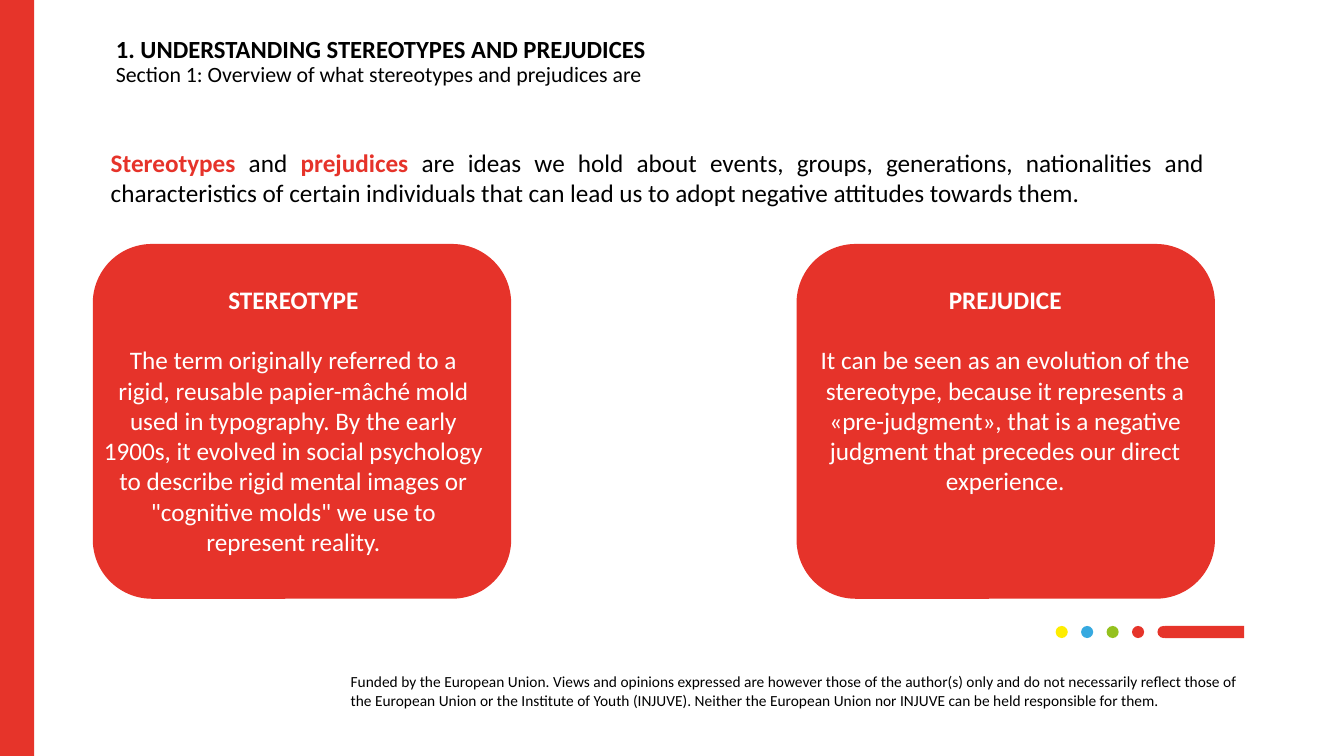
import pptx
from pptx.dml.color import RGBColor
from pptx.enum.shapes import MSO_SHAPE
from pptx.enum.text import PP_ALIGN
from pptx.util import Inches, Pt

COLORS = {
    "red": "E6342A",
    "card": "E6332A",
    "green": "94C11E",
    "blue": "36A9E0",
    "yellow": "FEED00",
    "black": "000000",
    "white": "FFFFFF",
}

deck = pptx.Presentation()
deck.slide_width, deck.slide_height = Inches(13.33), Inches(7.5)
page = deck.slides.add_slide(deck.slide_layouts[6])


def add_block(kind, left, top, width, height, color):
    block = page.shapes.add_shape(
        kind, Inches(left), Inches(top), Inches(width), Inches(height))
    block.shadow.inherit = False
    block.fill.solid()
    block.fill.fore_color.rgb = RGBColor.from_string(COLORS[color])
    block.line.fill.background()


def add_text(left, top, width, height, paragraphs, align=PP_ALIGN.LEFT):
    """Add a wrapped box; each paragraph is a list of (text, size, color, bold)."""
    box = page.shapes.add_textbox(
        Inches(left), Inches(top), Inches(width), Inches(height))
    frame = box.text_frame
    frame.word_wrap = True
    frame.text = "\n".join("" for _ in paragraphs)
    for para, spans in zip(frame.paragraphs, paragraphs):
        para.alignment = align
        for text, size, color, bold in spans:
            span = para.add_run()
            span.text = text
            span.font.name = "Calibri"
            span.font.size = Pt(size)
            span.font.bold = bold
            span.font.color.rgb = RGBColor.from_string(COLORS[color])
    return frame


# Side band and footer decoration
add_block(MSO_SHAPE.RECTANGLE, 0, 0, 0.34, 7.5, "red")
add_block(MSO_SHAPE.RECTANGLE, 11.55, 6.21, 0.79, 0.12, "red")
for index, color in enumerate(["yellow", "blue", "green", "red", "red"]):
    add_block(MSO_SHAPE.OVAL, 10.47 + 0.2525 * index, 6.21, 0.12, 0.12, color)

add_text(3.38, 6.62, 9.03, 0.47, [[(
    "Funded by the European Union. Views and opinions expressed are however "
    "those of the author(s) only and do not necessarily reflect those of the "
    "European Union or the Institute of Youth (INJUVE). Neither the European "
    "Union nor INJUVE can be held responsible for them.", 11, "black", False)]])

# Heading
heading = add_text(1.05, 0.32, 7.55, 0.69, [
    [("1. UNDERSTANDING STEREOTYPES AND PREJUDICES", 17.6, "black", True)],
    [("Section 1: Overview of what stereotypes and prejudices are",
      15.6, "black", False)],
])
for para in heading.paragraphs:
    para.line_spacing = 0.9

# Introduction
add_text(1, 1.41, 11.04, 0.71, [[
    ("Stereotypes", 18, "card", True),
    (" and ", 18, "black", False),
    ("prejudices ", 18, "card", True),
    ("are ideas we hold about events, groups, generations, nationalities and "
     "characteristics of certain individuals that can lead us to adopt "
     "negative attitudes towards them.", 18, "black", False),
]], PP_ALIGN.JUSTIFY)

# Definition cards: card left, text left, text height, term, definition
cards = [
    (0.92, 0.92, 2.83, "STEREOTYPE",
     "The term originally referred to a rigid, reusable papier-mâché mold used "
     "in typography. By the early 1900s, it evolved in social psychology to "
     "describe rigid mental images or \"cognitive molds\" we use to represent "
     "reality."),
    (7.9, 7.98, 2.22, "PREJUDICE",
     "It can be seen as an evolution of the stereotype, because it represents "
     "a «pre-judgment», that is a negative judgment that precedes our direct "
     "experience."),
]
for card_left, text_left, text_height, term, definition in cards:
    add_block(MSO_SHAPE.ROUNDED_RECTANGLE, card_left, 2.42, 4.15, 3.52, "card")
    card_text = add_text(text_left, 2.77, 3.98, text_height, [
        [(term, 18, "white", True)],
        [(definition, 18, "white", False)],
    ], PP_ALIGN.CENTER)
    card_text.paragraphs[1].space_before = Pt(21.6)

deck.save("out.pptx")
